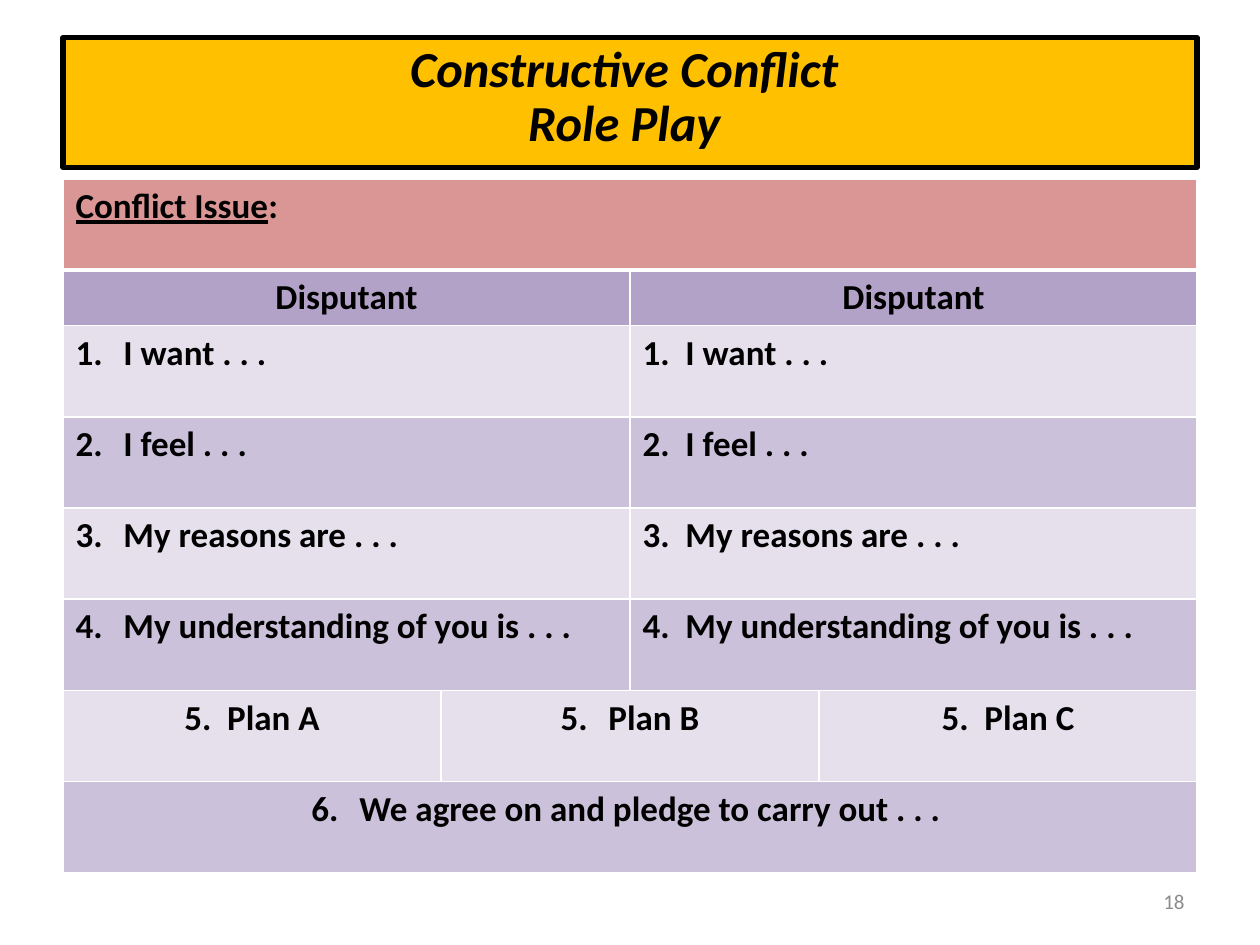
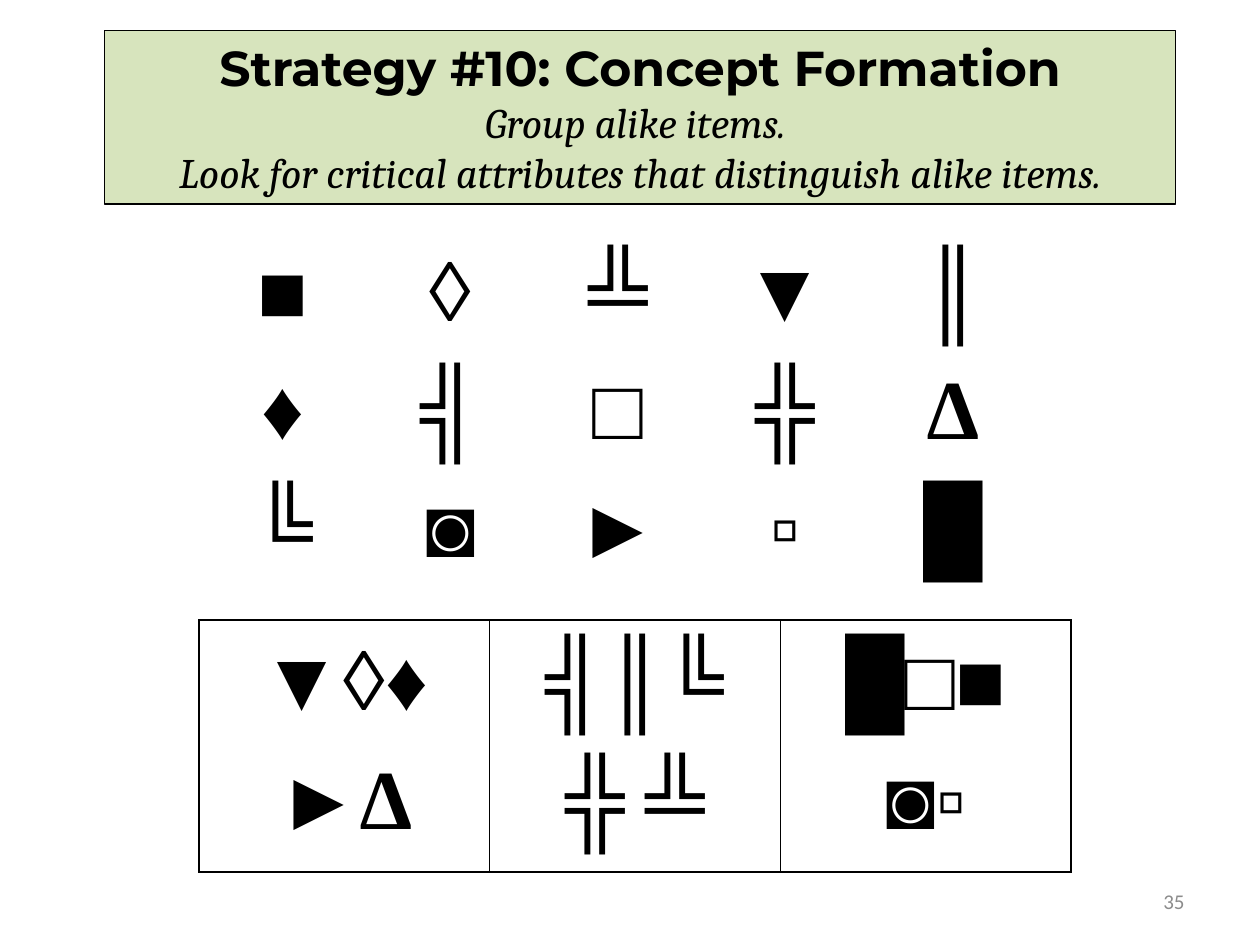
from dataclasses import dataclass, replace

from lxml.etree import SubElement
from pptx import Presentation
from pptx.dml.color import RGBColor
from pptx.enum.shapes import MSO_SHAPE
from pptx.enum.text import MSO_ANCHOR, MSO_AUTO_SIZE, PP_ALIGN
from pptx.oxml.ns import qn
from pptx.util import Inches, Pt

WIDTH, HEIGHT = Inches(10), Inches(7.5)
COLUMNS, ROWS = 100, 75
BLANK_LAYOUT = 6
PLAIN_TABLE = "{2D5ABB26-0587-4C30-8999-92F81FD0307C}"

BLACK, WHITE, GREY = "000000", "FFFFFF", "8C8C8C"
GOLD, GREEN, ROSE = "FFC000", "D7E4BD", "D99694"
PURPLE, LILAC, PALE = "B3A2C7", "CCC1DA", "E6E0EC"


def color(value):
    return RGBColor.from_string(value)


@dataclass(frozen=True)
class TextStyle:
    size: float
    font: str = "Calibri"
    color: str = BLACK
    bold: bool = False
    italic: bool = False
    align: PP_ALIGN = PP_ALIGN.CENTER
    line_spacing: float = 1.0
    space_before: float = 0


BANNER = TextStyle(28.8, bold=True, italic=True, line_spacing=0.9)
STRATEGY = TextStyle(28, "Montserrat", bold=True)
GUIDANCE = TextStyle(24, "Cambria", italic=True)
HEADING = TextStyle(20, bold=True)
PROMPT = replace(HEADING, align=PP_ALIGN.LEFT)
SYMBOL = TextStyle(48, "Times New Roman", bold=True, line_spacing=1.17, space_before=6)
PAGE = TextStyle(12, color=GREY, align=PP_ALIGN.RIGHT)


class Deck:
    def __init__(self):
        self.presentation = Presentation()
        self.presentation.slide_width = WIDTH
        self.presentation.slide_height = HEIGHT
        self.slide = None

    def across(self, columns):
        return round(WIDTH * columns / COLUMNS)

    def down(self, rows):
        return round(HEIGHT * rows / ROWS)

    def area(self, left, top, width, height):
        return self.across(left), self.down(top), self.across(width), self.down(height)

    def new_slide(self):
        layout = self.presentation.slide_layouts[BLANK_LAYOUT]
        self.slide = self.presentation.slides.add_slide(layout)

    def style_run(self, run, style):
        run.font.name = style.font
        run.font.size = Pt(style.size)
        run.font.bold = style.bold
        run.font.italic = style.italic
        run.font.color.rgb = color(style.color)

    def set_text(self, text_frame, text, *styles):
        text_frame.text = text
        for index, paragraph in enumerate(text_frame.paragraphs):
            style = styles[min(index, len(styles) - 1)]
            paragraph.alignment = style.align
            paragraph.line_spacing = style.line_spacing
            paragraph.space_before = Pt(style.space_before)
            for run in paragraph.runs:
                self.style_run(run, style)

    def number(self, paragraph, start, indent):
        properties = paragraph._p.get_or_add_pPr()
        properties.set("marL", str(self.across(indent)))
        properties.set("indent", str(-self.across(indent)))
        SubElement(properties, qn("a:buAutoNum"), type="arabicPeriod", startAt=str(start))

    def title_box(self, area, fill, line_width, text, *styles, anchor=MSO_ANCHOR.TOP):
        shape = self.slide.shapes.add_shape(MSO_SHAPE.RECTANGLE, *self.area(*area))
        shape.shadow.inherit = False
        shape.fill.solid()
        shape.fill.fore_color.rgb = color(fill)
        shape.line.color.rgb = color(BLACK)
        shape.line.width = Pt(line_width)
        shape.text_frame.word_wrap = True
        shape.text_frame.vertical_anchor = anchor
        self.set_text(shape.text_frame, text, *styles)
        return shape

    def page_number(self, text):
        box = self.slide.shapes.add_textbox(*self.area(71.7, 69.5, 23.3, 4))
        box.text_frame.word_wrap = True
        box.text_frame.vertical_anchor = MSO_ANCHOR.MIDDLE
        self.set_text(box.text_frame, text, PAGE)

    def table(self, left, top, widths, heights):
        area = self.area(left, top, sum(widths), sum(heights))
        frame = self.slide.shapes.add_table(len(heights), len(widths), *area)
        table = frame.table
        table.first_row = table.horz_banding = False
        table._tbl.tblPr.find(qn("a:tableStyleId")).text = PLAIN_TABLE
        for column, width in zip(table.columns, widths):
            column.width = self.across(width)
        for row, height in zip(table.rows, heights):
            row.height = self.down(height)
        for cell in table.iter_cells():
            cell.fill.background()
        return table

    def border(self, cell, line_color, sides="LRTB", width=1):
        properties = cell._tc.get_or_add_tcPr()
        for position, side in enumerate("LRTB"):
            if side not in sides:
                continue
            tag = qn(f"a:ln{side}")
            for previous in properties.findall(tag):
                properties.remove(previous)
            line = SubElement(properties, tag, w=str(Pt(width)))
            fill = SubElement(line, qn("a:solidFill"))
            SubElement(fill, qn("a:srgbClr"), val=line_color)
            properties.insert(position, line)

    def border_all(self, table, line_color):
        for cell in table.iter_cells():
            self.border(cell, line_color)

    def band(self, table, row, first, last, fill, text, style, start=None, indent=3.8):
        cell = table.cell(row, first)
        if last > first:
            cell.merge(table.cell(row, last))
        cell.fill.solid()
        cell.fill.fore_color.rgb = color(fill)
        self.set_text(cell.text_frame, text, style)
        paragraph = cell.text_frame.paragraphs[0]
        if start:
            self.number(paragraph, start, indent)
        return paragraph

    def symbol_cell(self, cell, text):
        cell.margin_left = cell.margin_right = self.across(0.7)
        cell.margin_top = cell.margin_bottom = 0
        self.set_text(cell.text_frame, text, SYMBOL)


def build_role_play(deck):
    deck.new_slide()
    deck.title_box((5, 3, 90, 10.3), GOLD, 3, "Constructive Conflict \vRole Play ", BANNER)

    table = deck.table(5, 14.2, [30, 15, 15, 30], [7.24, 4.3] + [7.24] * 6)
    deck.border_all(table, WHITE)
    for column in range(4):
        deck.border(table.cell(0, column), WHITE, "B", 3)
        deck.border(table.cell(1, column), WHITE, "T", 3)

    issue = deck.band(table, 0, 0, 3, ROSE, "Conflict Issue", PROMPT)
    issue.runs[0].font.underline = True
    colon = issue.add_run()
    colon.text = ":"
    deck.style_run(colon, PROMPT)

    prompts = ["I want . . .", "I feel . . .", "My reasons are . . .",
               "My understanding of you is . . ."]
    for first, indent in ((0, 3.8), (2, 3.4)):
        deck.band(table, 1, first, first + 1, PURPLE, "Disputant", HEADING)
        for step, prompt in enumerate(prompts, 1):
            fill = PALE if step % 2 else LILAC
            deck.band(table, step + 1, first, first + 1, fill, prompt, PROMPT, step, indent)

    plans = [("Plan A", 0, 0, 3.4), ("Plan B", 1, 2, 3.8), ("Plan C", 3, 3, 3.4)]
    for plan, first, last, indent in plans:
        deck.band(table, 6, first, last, PALE, plan, HEADING, 5, indent)
    deck.band(table, 7, 0, 3, LILAC, "We agree on and pledge to carry out . . . ", HEADING, 6)
    deck.page_number("18")


def build_concept_formation(deck):
    deck.new_slide()
    symbol_rows = ["■◊╩▼║", "♦╣□╬∆", "╚◙►▫█"]
    items = deck.table(15.8, 18.3, [13.3] * 5, [7.5] * 3)
    for row, symbols in enumerate(symbol_rows):
        for column, symbol in enumerate(symbols):
            deck.symbol_cell(items.cell(row, column), symbol)

    groups = deck.table(15.8, 49.2, [23.07] * 3, [20])
    deck.border_all(groups, BLACK)
    for column, group in enumerate(["▼◊♦\n►∆", "╣║╚\n╬ ╩", "█□■\n◙▫"]):
        deck.symbol_cell(groups.cell(0, column), group)

    title = deck.title_box(
        (8.3, 2.4, 85, 13.8), GREEN, 0.75,
        "Strategy #10: Concept Formation\nGroup alike items. \n"
        "Look for critical attributes that distinguish alike items.",
        STRATEGY, GUIDANCE, anchor=MSO_ANCHOR.MIDDLE)
    title.text_frame.auto_size = MSO_AUTO_SIZE.SHAPE_TO_FIT_TEXT
    deck.page_number("35")


def main():
    deck = Deck()
    build_role_play(deck)
    build_concept_formation(deck)
    deck.presentation.save("out.pptx")


if __name__ == "__main__":
    main()
